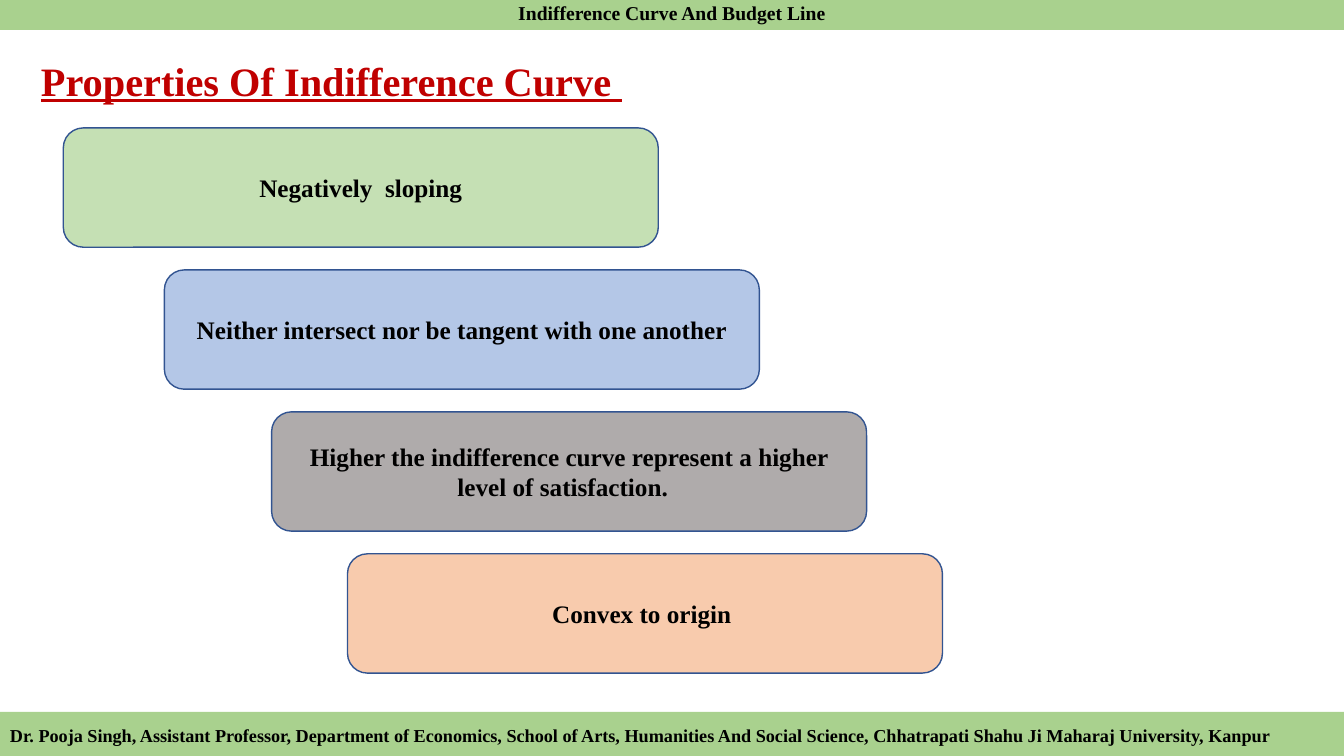
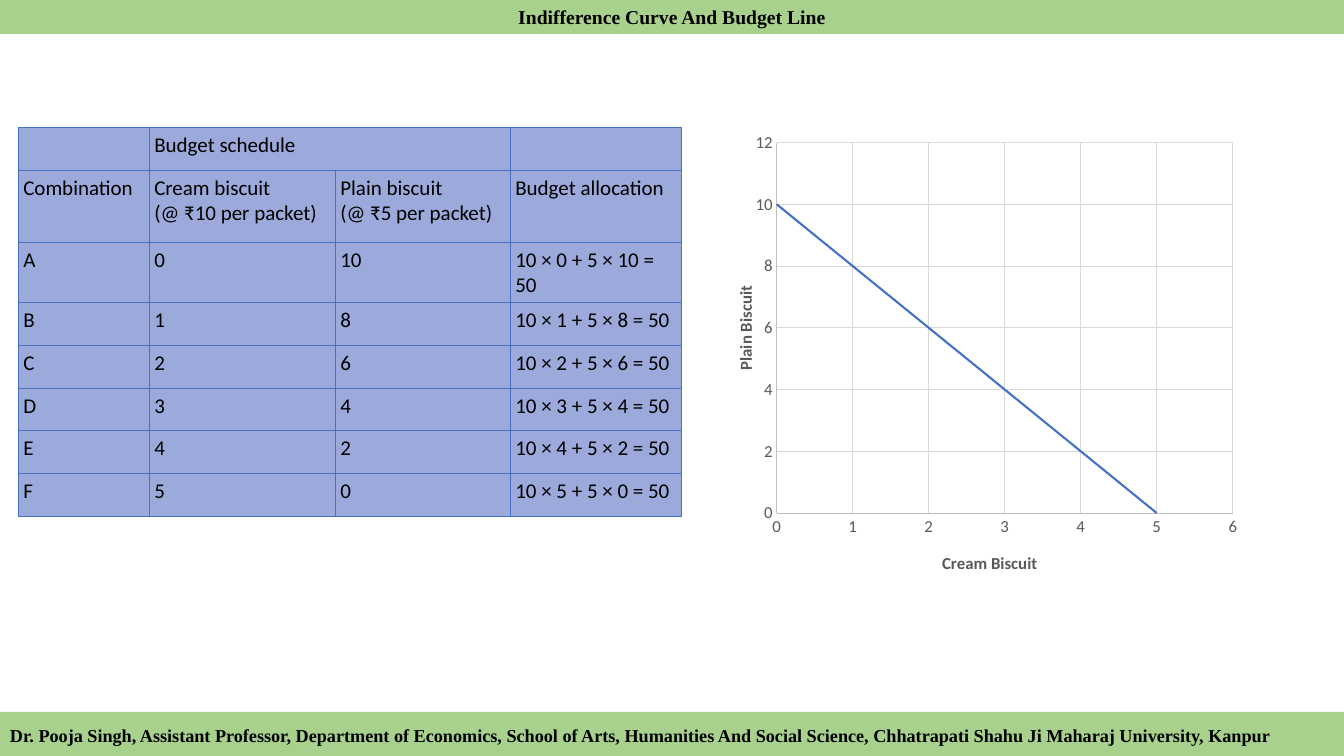
"""Build two slides on the indifference curve and the budget line."""
from lxml import etree
from pptx import Presentation
from pptx.chart import data
from pptx.dml import color
from pptx.enum import chart as charts, shapes, text
from pptx.oxml import ns
from pptx.util import Pt

SERIF, SANS = "Times New Roman", "Calibri"
BLACK, GREEN, RED, BLUE = "000000", "A9D18E", "C00000", "4472C4"
OUTLINE, CELL, GREY, AXIS, GRID = "325491", "9BAADA", "595959", "BFBFBF", "D9D9D9"
WIDTH, HEIGHT = 960, 540

TOPIC = "Indifference Curve And Budget Line"
LECTURER = (
    "Dr. Pooja Singh, Assistant Professor, Department of Economics, School of Arts, "
    "Humanities And Social Science, Chhatrapati Shahu Ji Maharaj University, Kanpur"
)
TITLE = "Properties Of Indifference Curve "
PROPERTIES = [
    ("Negatively  sloping", 45.2, "C5E0B4"),
    ("Neither intersect nor be tangent with one another", 117.4, "B4C7E7"),
    ("Higher the indifference curve represent a higher level of satisfaction.  ", 194, "AFABAB"),
    ("Convex to origin ", 248.2, "F8CBAD"),
]
PRICES = {"Cream biscuit": 10, "Plain biscuit": 5}
BUNDLES = [("A", 0, 10), ("B", 1, 8), ("C", 2, 6), ("D", 3, 4), ("E", 4, 2), ("F", 5, 0)]
COLUMNS = [93.6, 132.9, 125, 122.1]


def rgb(value):
    return color.RGBColor.from_string(value)


def style(font, size, fill=BLACK, name=SERIF, bold=True):
    font.size, font.name, font.bold = Pt(size), name, bold
    font.color.rgb = rgb(fill)


def write(frame, words, size, align=None, **look):
    frame.text = words
    for paragraph in frame.paragraphs:
        paragraph.alignment = align
        for run in paragraph.runs:
            style(run.font, size, **look)


def add_box(slide, kind, place, fill, words, size, align, outline=None):
    box = slide.shapes.add_shape(kind, *map(Pt, place))
    box.shadow.inherit = False
    box.fill.solid()
    box.fill.fore_color.rgb = rgb(fill)
    if outline:
        box.line.color.rgb = rgb(outline)
        box.line.width = Pt(1)
    else:
        box.line.fill.background()
    box.text_frame.vertical_anchor = text.MSO_ANCHOR.MIDDLE
    write(box.text_frame, words, size, align)


def add_bands(slide, top):
    band = shapes.MSO_SHAPE.RECTANGLE
    add_box(slide, band, (0, top, WIDTH, 24.2), GREEN, TOPIC, 14, text.PP_ALIGN.CENTER)
    add_box(slide, band, (0, 508.4, WIDTH, 33.2), GREEN, LECTURER, 13, text.PP_ALIGN.LEFT)


def add_title(slide):
    title = slide.shapes.add_textbox(*map(Pt, (22.2, 40.2, 509, 38.2))).text_frame
    title.word_wrap = True
    title.vertical_anchor = text.MSO_ANCHOR.MIDDLE
    write(title, TITLE, 28.8, fill=RED)
    title.paragraphs[0].line_spacing = 0.9
    title.paragraphs[0].runs[0].font.underline = True


def add_properties(slide):
    for step, (words, left, fill) in enumerate(PROPERTIES):
        place = (left, 91.4 + step * 101.4, 425, 85.2)
        add_box(slide, shapes.MSO_SHAPE.ROUNDED_RECTANGLE, place, fill, words, 18,
                text.PP_ALIGN.CENTER, OUTLINE)


def add_borders(cell):
    properties = cell._tc.get_or_add_tcPr()
    for index, side in enumerate(("a:lnL", "a:lnR", "a:lnT", "a:lnB")):
        line = etree.Element(ns.qn(side), w=str(Pt(0.5)))
        solid = etree.SubElement(line, ns.qn("a:solidFill"))
        etree.SubElement(solid, ns.qn("a:srgbClr"), val=BLUE)
        properties.insert(index, line)


def add_schedule(slide):
    cream, plain = PRICES.values()
    heads = [f"{name}\n(@ ₹{price} per packet)" for name, price in PRICES.items()]
    rows = [("", "Budget schedule", "", ""), ("Combination", *heads, "Budget allocation")]
    for label, x, y in BUNDLES:
        total = cream * x + plain * y
        rows.append((label, str(x), str(y), f"{cream} × {x} + {plain} × {y} = {total}"))
    heights = [30.5, 51.5] + [30.5] * len(BUNDLES)
    place = (13, 91, sum(COLUMNS), sum(heights))
    table = slide.shapes.add_table(len(rows), len(COLUMNS), *map(Pt, place)).table
    for column, width in zip(table.columns, COLUMNS):
        column.width = Pt(width)
    for row, height, entries in zip(table.rows, heights, rows):
        row.height = Pt(height)
        for cell, words in zip(row.cells, entries):
            cell.margin_left = cell.margin_right = Pt(3.6)
            cell.margin_top = cell.margin_bottom = Pt(3.6)
            cell.fill.solid()
            cell.fill.fore_color.rgb = rgb(CELL)
            write(cell.text_frame, words, 15, name=SANS, bold=False)
            add_borders(cell)
    table.cell(0, 1).merge(table.cell(0, 2))


def set_layout(parent, index, **values):
    for old in parent.findall(ns.qn("c:layout")):
        parent.remove(old)
    layout = etree.Element(ns.qn("c:layout"))
    manual = etree.SubElement(layout, ns.qn("c:manualLayout"))
    for key, value in values.items():
        etree.SubElement(manual, ns.qn(f"c:{key}"), val=str(value))
    parent.insert(index, layout)


def style_axis(axis, name, top, unit, x, y):
    axis.minimum_scale, axis.maximum_scale, axis.major_unit = 0, top, unit
    axis.major_tick_mark = axis.minor_tick_mark = charts.XL_TICK_MARK.NONE
    axis.has_major_gridlines = True
    for line, tint in ((axis.format.line, AXIS), (axis.major_gridlines.format.line, GRID)):
        line.color.rgb = rgb(tint)
        line.width = Pt(0.75)
    style(axis.tick_labels.font, 12, GREY, SANS, False)
    write(axis.axis_title.text_frame, name, 12, fill=GREY, name=SANS)
    set_layout(axis.axis_title._element, 1, xMode="edge", yMode="edge", x=x, y=y)


def add_budget_line(slide):
    points = data.XyChartData()
    series = points.add_series("Series 1")
    for _, x, y in BUNDLES:
        series.add_data_point(x, y)
    kind = charts.XL_CHART_TYPE.XY_SCATTER_LINES_NO_MARKERS
    place = (518.4, 90.7, 371.5, 327.6)
    chart = slide.shapes.add_chart(kind, *map(Pt, place), points).chart
    chart.has_title = chart.has_legend = False
    style(chart.font, 10, name=SANS, bold=False)
    chart.plots[0].vary_by_categories = False
    budget = chart.plots[0].series[0]
    budget.smooth = False
    budget.format.line.color.rgb = rgb(BLUE)
    budget.format.line.width = Pt(1.5)
    style_axis(chart.category_axis, "Cream Biscuit", 6, 1, 0.41, 0.92)
    style_axis(chart.value_axis, "Plain Biscuit", 12, 2, 0.01, 0.34)
    set_layout(chart._chartSpace.chart.plotArea, 0, layoutTarget="inner", xMode="edge",
               yMode="edge", x=0.098, y=0.034, w=0.877, h=0.808)


def main():
    deck = Presentation()
    deck.slide_width, deck.slide_height = Pt(WIDTH), Pt(HEIGHT)
    blank = deck.slide_layouts[6]

    properties = deck.slides.add_slide(blank)
    add_title(properties)
    add_properties(properties)
    add_bands(properties, -2.9)

    budget = deck.slides.add_slide(blank)
    add_schedule(budget)
    add_budget_line(budget)
    add_bands(budget, 0)

    deck.save("out.pptx")


if __name__ == "__main__":
    main()
